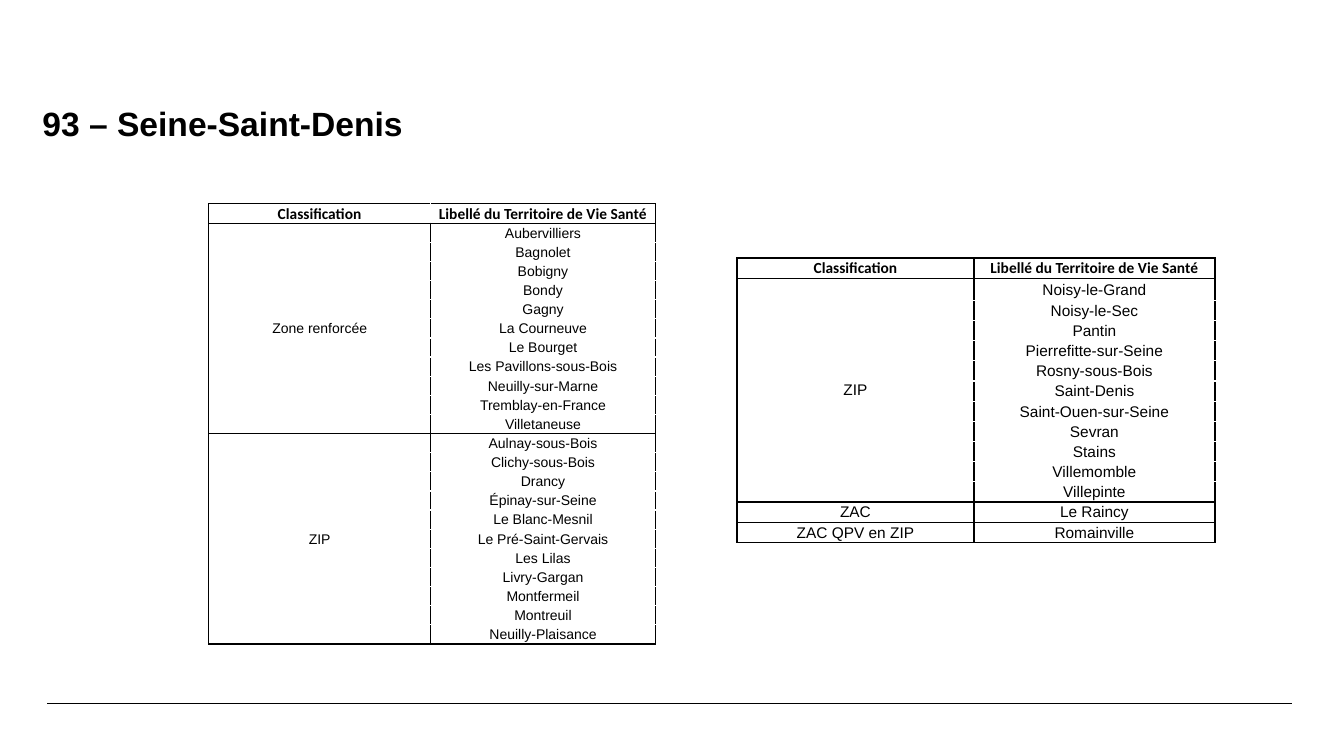
from lxml import etree
from pptx import Presentation
from pptx.dml.color import RGBColor
from pptx.enum.shapes import MSO_CONNECTOR
from pptx.enum.text import MSO_ANCHOR, PP_ALIGN
from pptx.oxml.ns import qn
from pptx.util import Inches, Pt

BLACK = RGBColor(0, 0, 0)
WHITE = RGBColor(255, 255, 255)
CENTER = PP_ALIGN.CENTER
MIDDLE = MSO_ANCHOR.MIDDLE
STRAIGHT = MSO_CONNECTOR.STRAIGHT

# Content
TITLE = "93 – Seine-Saint-Denis"
HEADERS = ("Classification", "Libellé du Territoire de Vie Santé")
TABLES = [
    {
        "at": (2.07, 2.02), "columns": (2.2, 2.23), "row": 0.19, "tall_rows": {},
        "size": 10, "header_divider": WHITE,
        "groups": [
            ("Zone renforcée", [
                "Aubervilliers", "Bagnolet", "Bobigny", "Bondy", "Gagny", "La Courneuve",
                "Le Bourget", "Les Pavillons-sous-Bois", "Neuilly-sur-Marne",
                "Tremblay-en-France", "Villetaneuse"]),
            ("ZIP", [
                "Aulnay-sous-Bois", "Clichy-sous-Bois", "Drancy", "Épinay-sur-Seine",
                "Le Blanc-Mesnil", "Le Pré-Saint-Gervais", "Les Lilas", "Livry-Gargan",
                "Montfermeil", "Montreuil", "Neuilly-Plaisance"]),
        ],
    },
    {
        "at": (7.31, 2.56), "columns": (2.35, 2.39), "row": 0.2, "tall_rows": {1: 0.22},
        "size": 11, "header_divider": BLACK,
        "groups": [
            ("ZIP", [
                "Noisy-le-Grand", "Noisy-le-Sec", "Pantin", "Pierrefitte-sur-Seine",
                "Rosny-sous-Bois", "Saint-Denis", "Saint-Ouen-sur-Seine", "Sevran",
                "Stains", "Villemomble", "Villepinte"]),
            ("ZAC", ["Le Raincy"]),
            ("ZAC QPV en ZIP", ["Romainville"]),
        ],
    },
]
FOOTER_Y = 6.98
FOOTER_LINES = [(0.47, 12.76), (0.53, 12.81)]

HEADER_FONT = {"name": "Calibri", "size": Pt(11), "bold": True}
TITLE_FONT = {"name": "Arial", "size": Pt(24), "bold": True}


def write(paragraph, text, font):
    run = paragraph.add_run()
    run.text = text
    run.font.color.rgb = BLACK
    for name, value in font.items():
        setattr(run.font, name, value)


def format_cell(cell, left=BLACK, right=BLACK, top=BLACK, bottom=BLACK):
    properties = cell._tc.get_or_add_tcPr()
    for tag, color in (("lnL", left), ("lnR", right), ("lnT", top), ("lnB", bottom)):
        border = etree.SubElement(properties, qn(f"a:{tag}"), w=str(Pt(1)))
        fill = etree.SubElement(border, qn("a:solidFill"))
        etree.SubElement(fill, qn("a:srgbClr"), val=str(color))
    cell.fill.solid()
    cell.fill.fore_color.rgb = WHITE
    cell.vertical_anchor = MIDDLE
    cell.margin_left = cell.margin_right = cell.margin_top = Inches(0.01)
    cell.margin_bottom = 0


def write_cell(cell, text, font):
    paragraph = cell.text_frame.paragraphs[0]
    paragraph.alignment = CENTER
    write(paragraph, text, font)


def add_territory_table(slide, data):
    row_count = 1 + sum(len(places) for _, places in data["groups"])
    heights = [data["tall_rows"].get(i, data["row"]) for i in range(row_count)]
    left, top = data["at"]
    table = slide.shapes.add_table(
        row_count, len(HEADERS), Inches(left), Inches(top),
        Inches(sum(data["columns"])), Inches(sum(heights))).table
    table.first_row = table.horz_banding = False
    for column, width in zip(table.columns, data["columns"]):
        column.width = Inches(width)
    for row, height in zip(table.rows, heights):
        row.height = Inches(height)

    # Header row
    divider = data["header_divider"]
    format_cell(table.cell(0, 0), right=divider)
    format_cell(table.cell(0, 1), left=divider)
    for column, header in enumerate(HEADERS):
        write_cell(table.cell(0, column), header, HEADER_FONT)

    # One merged class cell beside its territories
    body_font = {"name": "Arial", "size": Pt(data["size"]), "bold": False}
    first = 1
    for classification, places in data["groups"]:
        last = first + len(places) - 1
        for row, place in enumerate(places, first):
            format_cell(table.cell(row, 0))
            format_cell(table.cell(row, 1),
                        top=BLACK if row == first else WHITE,
                        bottom=BLACK if row == last else WHITE)
            write_cell(table.cell(row, 1), place, body_font)
        if last > first:
            table.cell(first, 0).merge(table.cell(last, 0))
        write_cell(table.cell(first, 0), classification, body_font)
        first = last + 1


def main():
    presentation = Presentation()
    presentation.slide_width = Inches(13.33)
    presentation.slide_height = Inches(7.5)
    slide = presentation.slides.add_slide(presentation.slide_layouts[6])

    # Footer rule
    for start, end in FOOTER_LINES:
        line = slide.shapes.add_connector(
            STRAIGHT, Inches(start), Inches(FOOTER_Y), Inches(end), Inches(FOOTER_Y))
        line.line.color.rgb = BLACK
        line.line.width = Pt(0.8)
        etree.SubElement(line._element.spPr, qn("a:effectLst"))

    # Title
    box = slide.shapes.add_textbox(Inches(0.29), Inches(1.02), Inches(10.12), Inches(0.68))
    frame = box.text_frame
    frame.word_wrap = True
    frame.margin_left = frame.margin_right = frame.margin_top = frame.margin_bottom = 0
    paragraph = frame.paragraphs[0]
    paragraph.space_after = Pt(6.7)
    paragraph._p.get_or_add_pPr().set("marL", str(Inches(0.13)))
    write(paragraph, TITLE, TITLE_FONT)

    # Tables
    for data in TABLES:
        add_territory_table(slide, data)

    presentation.save("out.pptx")


if __name__ == "__main__":
    main()
